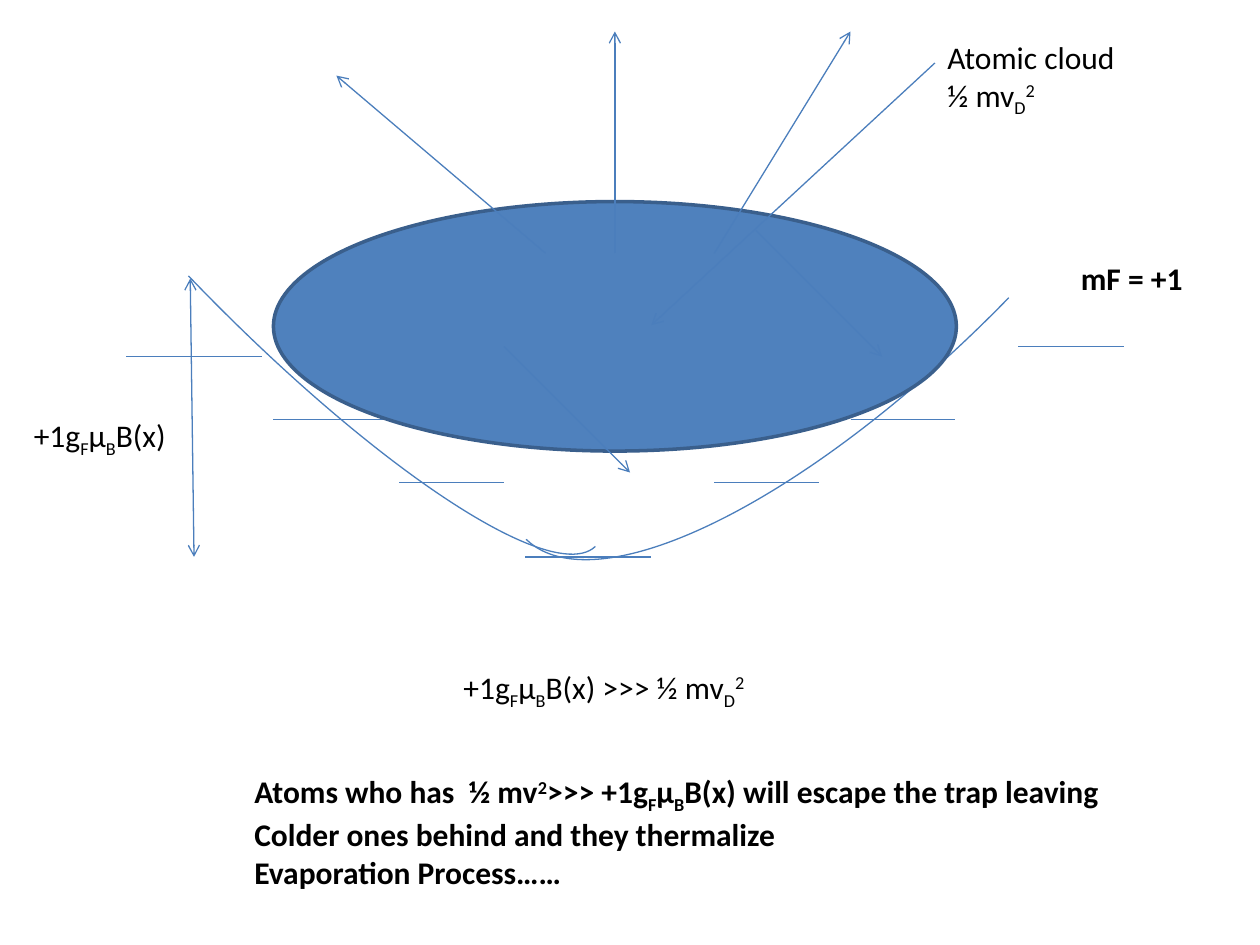
from pptx import Presentation
from pptx.dml.color import RGBColor
from pptx.enum.shapes import MSO_CONNECTOR, MSO_SHAPE
from pptx.enum.text import MSO_AUTO_SIZE
from pptx.oxml.ns import qn
from pptx.util import Inches, Pt
from lxml.etree import SubElement

COLORS = {"line": "4B7EBC", "cloud": "4F81BD", "cloud_edge": "3A5F8C", "text": "000000"}
BASELINES = {"_": "-25000", "^": "30000"}


def rgb(name):
    return RGBColor.from_string(COLORS[name])


def split_scripts(text):
    """Yield (text, baseline) parts; _ lowers and ^ raises the next character."""
    plain, i = "", 0
    while i < len(text):
        if text[i] in BASELINES:
            if plain:
                yield plain, None
            yield text[i + 1], BASELINES[text[i]]
            plain, i = "", i + 2
        else:
            plain, i = plain + text[i], i + 1
    if plain:
        yield plain, None


def write(tf, text, size=18, bold=False, font="Calibri", color="text"):
    for n, line in enumerate(text.split("\n")):
        p = tf.paragraphs[0] if n == 0 else tf.add_paragraph()
        for part, baseline in split_scripts(line):
            r = p.add_run()
            r.text = part
            r.font.name, r.font.size, r.font.bold = font, Pt(size), bold
            r.font.color.rgb = rgb(color)
            if baseline:
                r._r.get_or_add_rPr().set("baseline", baseline)


class Diagram:
    def __init__(self, slide, line_width=0.75):
        self.shapes = slide.shapes
        self.line_width = line_width

    def line(self, x1, y1, x2, y2, ends=()):
        """Draw a line; ends lists the a:headEnd / a:tailEnd arrows to add."""
        c = self.shapes.add_connector(MSO_CONNECTOR.STRAIGHT, Inches(x1), Inches(y1),
                                      Inches(x2), Inches(y2))
        c.line.color.rgb = rgb("line")
        c.line.width = Pt(self.line_width)
        ln = c.line._get_or_add_ln()
        for end in ends:
            SubElement(ln, qn(end), type="arrow")
        SubElement(c._element.spPr, qn("a:effectLst"))

    def arrow(self, x1, y1, x2, y2, double=False):
        ends = ("a:headEnd", "a:tailEnd") if double else ("a:tailEnd",)
        self.line(x1, y1, x2, y2, ends)

    def shape(self, kind, x, y, w, h, fill=None, line="line", width=None):
        sp = self.shapes.add_shape(kind, Inches(x), Inches(y), Inches(w), Inches(h))
        sp.shadow.inherit = False
        if fill:
            sp.fill.solid()
            sp.fill.fore_color.rgb = rgb(fill)
        else:
            sp.fill.background()
        sp.line.color.rgb = rgb(line)
        sp.line.width = Pt(width or self.line_width)
        return sp

    def arc(self, x, y, w, h, rotation, flip=False):
        sp = self.shape(MSO_SHAPE.ARC, x, y, w, h)
        sp.rotation = rotation
        if flip:
            sp._element.spPr.find(qn("a:xfrm")).set("flipH", "1")

    def text(self, text, x, y, w, h, **fmt):
        tf = self.shapes.add_textbox(Inches(x), Inches(y), Inches(w), Inches(h)).text_frame
        tf.word_wrap = False
        tf.auto_size = MSO_AUTO_SIZE.SHAPE_TO_FIT_TEXT
        write(tf, text, **fmt)


def main():
    prs = Presentation()
    prs.slide_width, prs.slide_height = Inches(10), Inches(7.5)
    d = Diagram(prs.slides.add_slide(prs.slide_layouts[6]))

    # Energy levels and the trap potential
    levels = [(1, 2.08, 2.83), (2.17, 3.17, 3.33), (3.17, 4, 3.83), (4.17, 5.17, 4.42),
              (5.67, 6.5, 3.83), (6.75, 7.58, 3.33), (8.08, 8.92, 2.75)]
    for left, right, y in levels:
        d.line(left, y, right, y)
    d.text("mF = +1", 8.48, 2.01, 1.02, 0.4, bold=True)
    d.arc(2.95, -0.03, 8.09, 2.82, 134.2)
    d.arc(-1.68, 0.76, 7.57, 1.69, 226.2, flip=True)

    # Atomic cloud
    d.shape(MSO_SHAPE.OVAL, 2.17, 1.6, 5.42, 1.98, "cloud", "cloud_edge", 2)
    d.arrow(7.42, 0.5, 5.17, 2.58)
    d.text("Atomic cloud\n½ mv_D^2", 7.42, 0.25, 1.54, 0.71)

    # Trap depth and the conditions
    depth = "+1g_Fµ_BB(x)"
    d.text(depth, 0.17, 3.25, 1.34, 0.4)
    d.arrow(1.51, 2.21, 1.54, 4.42, double=True)
    d.text(depth + " >>> ½ mv_D^2", 3.58, 5.25, 2.5, 0.4)
    d.text(f"Atoms who has  ½ mv^2>>> {depth} will escape the trap leaving\n"
           "Colder ones behind and they thermalize\nEvaporation Process……",
           1.92, 6.08, 7, 1.31, bold=True)

    # Moving atoms
    for ends in [(4, 2.75, 5, 3.75), (4.33, 2.01, 2.67, 0.6), (4.88, 2.01, 4.88, 0.25),
                 (6, 1.83, 7, 2.83), (5.67, 2.01, 6.75, 0.25)]:
        d.arrow(*ends)

    prs.save("out.pptx")


if __name__ == "__main__":
    main()
